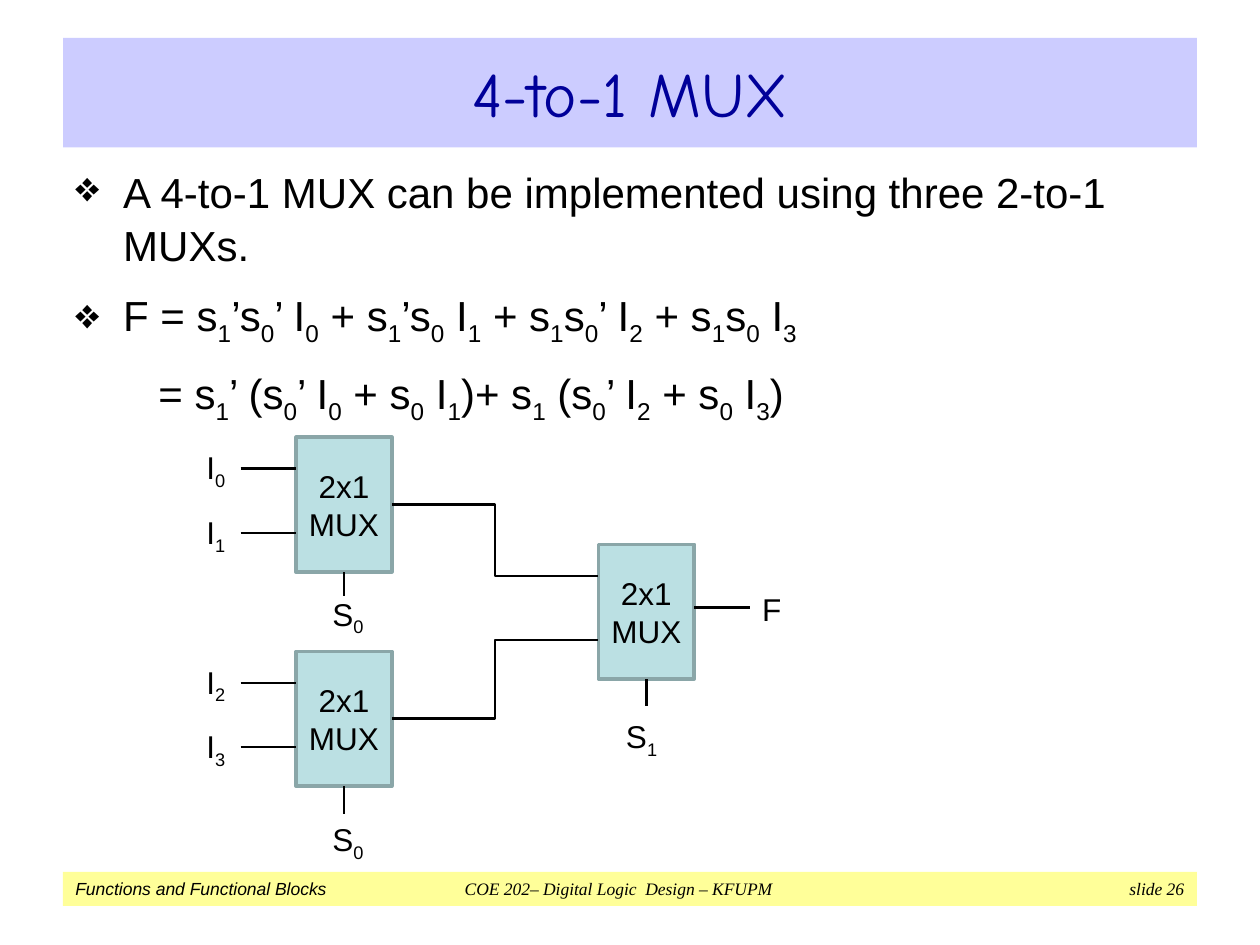
"""Build the 4-to-1 MUX slide: formulas above a diagram of three 2x1 MUXs."""
from lxml.etree import SubElement
from pptx import Presentation
from pptx.dml.color import RGBColor
from pptx.enum.shapes import MSO_CONNECTOR, MSO_SHAPE
from pptx.enum.text import MSO_ANCHOR, MSO_AUTO_SIZE, PP_ALIGN
from pptx.oxml.ns import qn
from pptx.util import Inches, Pt

TITLE = "4-to-1 MUX"
BODY = [
    ("A 4-to-1 MUX can be implemented using three 2-to-1 MUXs.", True),
    ("F = s_1’s_0’ I_0 + s_1’s_0 I_1 + s_1s_0’ I_2 + s_1s_0 I_3", True),
    ("= s_1’ (s_0’ I_0 + s_0 I_1)+ s_1 (s_0’ I_2 + s_0 I_3)", False),
]
FOOTER = [
    ("Functions and Functional Blocks", "Arial"),
    ("\tCOE 202– Digital Logic  Design – KFUPM\tslide 26", "Times New Roman"),
]
FOOTER_TABS = [(4.31, "ctr"), (8.8, "r")]

MUX_W, MUX_H = 0.76, 1.07
WIRE = 0.44
INPUT_YS = (0.25, 0.76)
MUXES = [
    {"at": (2.35, 3.47), "inputs": ("I_0", "I_1"), "select": "S_0", "stub": 0.19, "label": (2.54, 4.67)},
    {"at": (2.35, 5.17), "inputs": ("I_2", "I_3"), "select": "S_0", "stub": 0.22, "label": (2.54, 6.46)},
    {"at": (4.75, 4.32), "inputs": (), "select": "S_1", "stub": 0.21, "label": (4.87, 5.64)},
]


def rgb(color):
    return RGBColor.from_string(color)


def write(p, text, size=18, font="Arial", color="000000", italic=None, align=None):
    """Add text to a paragraph; the character after each underscore is a subscript."""
    p.alignment = align
    first, *rest = text.split("_")
    parts = [(first, False)]
    for piece in rest:
        parts += [(piece[0], True), (piece[1:], False)]
    for part, subscript in parts:
        if part:
            r = p.add_run()
            r.text = part
            r.font.size, r.font.name, r.font.italic = Pt(size), font, italic
            r.font.color.rgb = rgb(color)
            if subscript:
                r._r.get_or_add_rPr().set("baseline", "-25000")


def add_text(s, text, x, y, w, h=0.4, wrap=False, **fmt):
    sp = s.shapes.add_textbox(Inches(x), Inches(y), Inches(w), Inches(h))
    sp.text_frame.word_wrap = wrap
    if text:
        write(sp.text_frame.paragraphs[0], text, **fmt)
    return sp


def add_rect(s, x, y, w, h, fill, line=None):
    sp = s.shapes.add_shape(MSO_SHAPE.RECTANGLE, Inches(x), Inches(y), Inches(w), Inches(h))
    sp.shadow.inherit = False
    sp.fill.solid()
    sp.fill.fore_color.rgb = rgb(fill)
    if line:
        sp.line.color.rgb = rgb(line)
        sp.line.width = Pt(2)
    else:
        sp.line.fill.background()
    return sp


def add_wire(s, x1, y1, x2, y2, kind=MSO_CONNECTOR.STRAIGHT):
    c = s.shapes.add_connector(kind, Inches(x1), Inches(y1), Inches(x2), Inches(y2))
    c.line.color.rgb = rgb("000000")
    c.line.width = Pt(1.5)
    SubElement(c._element.spPr, qn("a:effectLst"))
    return c


def add_title(s):
    sp = s.shapes.title
    sp.left, sp.top, sp.width, sp.height = Inches(0.5), Inches(0.3), Inches(9), Inches(0.87)
    sp.fill.solid()
    sp.fill.fore_color.rgb = rgb("CCCCFF")
    tf = sp.text_frame
    tf.auto_size = MSO_AUTO_SIZE.NONE
    tf.vertical_anchor = MSO_ANCHOR.MIDDLE
    write(tf.paragraphs[0], TITLE, size=36, font="Comic Neue", color="000099", align=PP_ALIGN.CENTER)


def add_footer(s):
    tf = add_rect(s, 0.5, 6.92, 9, 0.27, "FFFF99").text_frame
    tf.vertical_anchor = MSO_ANCHOR.MIDDLE
    p = tf.paragraphs[0]
    for text, font in FOOTER:
        write(p, text, size=10, font=font, italic=True, align=PP_ALIGN.LEFT)
    tabs = SubElement(p._p.get_or_add_pPr(), qn("a:tabLst"))
    for pos, align in FOOTER_TABS:
        SubElement(tabs, qn("a:tab"), pos=str(Inches(pos)), algn=align)


def add_body(s):
    tf = add_text(s, "", 0.5, 1.25, 9, 5.62, wrap=True).text_frame
    for i, (text, bullet) in enumerate(BODY):
        p = tf.add_paragraph() if i else tf.paragraphs[0]
        p.line_spacing = 1.05
        p.space_before = Pt(10 if i else 0)
        write(p, text, size=24)
        pPr = p._p.get_or_add_pPr()
        pPr.set("marL", str(Inches(0.38 if bullet else 0.66)))
        if bullet:
            pPr.set("indent", str(Inches(-0.38)))
            SubElement(pPr, qn("a:buChar"), char="❖")


def add_mux(s, mux):
    x, y = mux["at"]
    sp = add_rect(s, x, y, MUX_W, MUX_H, "BBE0E3", "8AA6A8")
    tf = sp.text_frame
    tf.vertical_anchor = MSO_ANCHOR.MIDDLE
    tf.margin_left = tf.margin_right = Inches(0.05)
    write(tf.paragraphs[0], "2x1", align=PP_ALIGN.CENTER)
    write(tf.add_paragraph(), "MUX", align=PP_ALIGN.CENTER)
    for text, dy in zip(mux["inputs"], INPUT_YS):
        add_wire(s, x - WIRE, y + dy, x, y + dy)
        add_text(s, text, x - 0.81, y + dy - 0.21, 0.36)
    mid, bottom = x + MUX_W / 2, y + MUX_H
    add_wire(s, mid, bottom, mid, bottom + mux["stub"]).begin_connect(sp, 2)
    add_text(s, mux["select"], *mux["label"], 0.46)
    return sp


def main():
    prs = Presentation()
    prs.slide_width, prs.slide_height = Inches(10), Inches(7.5)
    s = prs.slides.add_slide(prs.slide_layouts[5])
    add_title(s)
    add_footer(s)
    add_body(s)

    *sources, _ = [add_mux(s, mux) for mux in MUXES]
    out_x, out_y = MUXES[-1]["at"]
    for sp, mux, dy in zip(sources, MUXES, INPUT_YS):
        x, y = mux["at"]
        wire = add_wire(s, x + MUX_W, y + MUX_H / 2, out_x, out_y + dy, MSO_CONNECTOR.ELBOW)
        wire.begin_connect(sp, 3)
    right = out_x + MUX_W
    add_wire(s, right, out_y + 0.5, right + WIRE, out_y + 0.5)
    add_text(s, "F", right + WIRE, 4.63, 0.44, wrap=True)
    prs.save("out.pptx")


if __name__ == "__main__":
    main()
